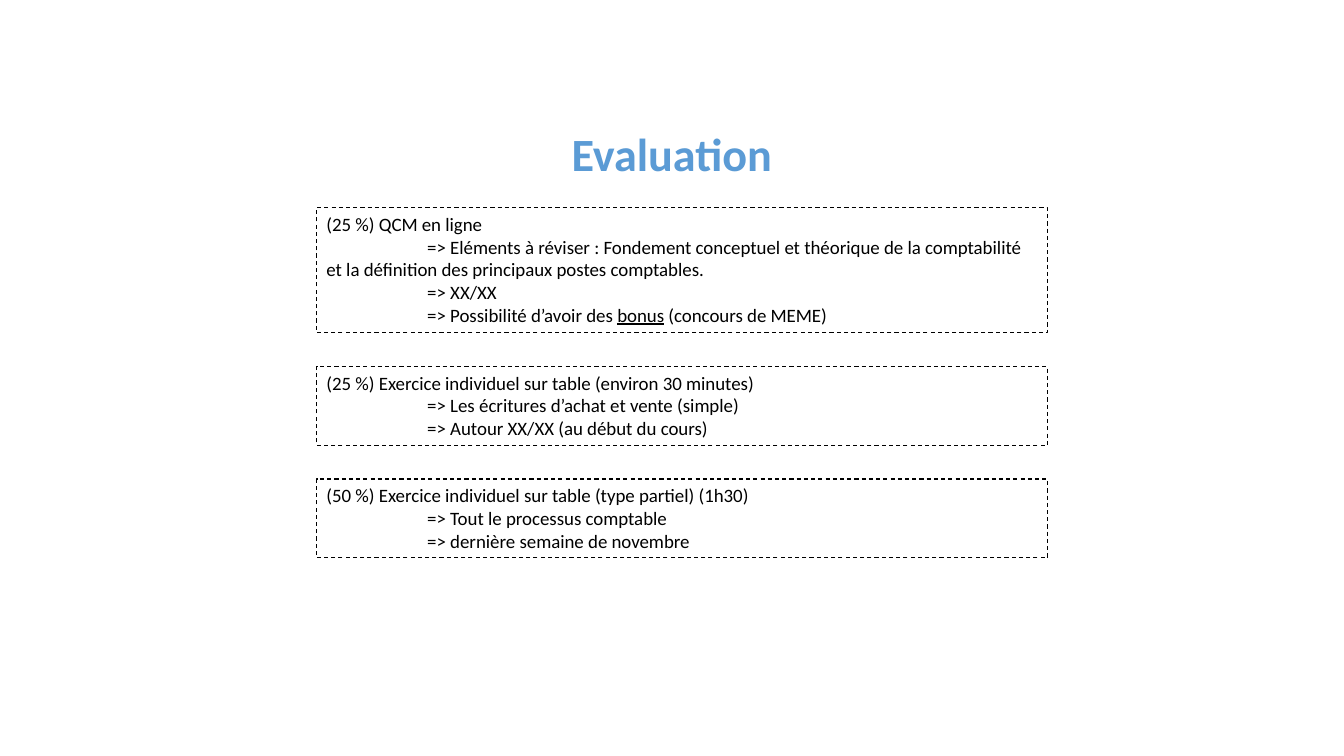
from pptx import Presentation
from pptx import util as u
from pptx.dml.color import RGBColor
from pptx.enum import dml, shapes, text

TITLE = "Evaluation"
ASSESSMENTS = [
    {"lines": 5, "heading": "(25 %) QCM en ligne", "details": [
        ["=> Eléments à réviser : Fondement conceptuel et théorique de la comptabilité "
         "et la définition des principaux postes comptables."],
        ["=> XX/XX"],
        ["=> Possibilité d’avoir des ", "bonus", " (concours de MEME)"],
    ]},
    {"lines": 3, "heading": "(25 %) Exercice individuel sur table (environ 30 minutes)", "details": [
        ["=> Les écritures d’achat et vente (simple)"],
        ["=> Autour XX/XX (au début du cours)"],
    ]},
    {"lines": 3, "heading": "(50 %) Exercice individuel sur table (type partiel) (1h30)", "details": [
        ["=> Tout le processus comptable"],
        ["=> dernière semaine de novembre"],
    ]},
]
UNDERLINED = {"bonus"}

THEME = {
    "font": "Calibri",
    "title_size": 33,
    "body_size": 13.5,
    "title": RGBColor(0x5B, 0x9B, 0xD5),
    "ink": RGBColor(0, 0, 0),
}
LEFT, TOP, WIDTH, GAP = 226.1, 148.3, 522, 24
LINE_HEIGHT, PADDING, DETAIL_INDENT = 16.48, 7, 72


def add_span(para, words, size, color, bold=False):
    span = para.add_run()
    span.text = words
    span.font.name = THEME["font"]
    span.font.size = u.Pt(size)
    span.font.color.rgb = color
    span.font.bold = bold
    if words in UNDERLINED:
        span.font.underline = True


def add_title(page):
    frame = page.shapes.add_textbox(u.Pt(236.9), u.Pt(75.6), u.Pt(486), u.Pt(67.7)).text_frame
    frame.word_wrap = True
    frame.vertical_anchor = text.MSO_ANCHOR.MIDDLE
    frame.margin_left = frame.margin_right = u.Pt(5.4)
    frame.margin_top = frame.margin_bottom = u.Pt(2.7)
    para = frame.paragraphs[0]
    para.alignment = text.PP_ALIGN.CENTER
    add_span(para, TITLE, THEME["title_size"], THEME["title"], bold=True)


def add_assessment(page, assessment, top, height):
    box = page.shapes.add_shape(shapes.MSO_SHAPE.RECTANGLE,
                                u.Pt(LEFT), u.Pt(top), u.Pt(WIDTH), u.Pt(height))
    box.shadow.inherit = False
    box.fill.background()
    box.line.color.rgb = THEME["ink"]
    box.line.width = u.Pt(0.75)
    box.line.dash_style = dml.MSO_LINE.DASH
    frame = box.text_frame
    frame.word_wrap = True
    frame.auto_size = text.MSO_AUTO_SIZE.SHAPE_TO_FIT_TEXT
    frame.vertical_anchor = text.MSO_ANCHOR.TOP
    for index, parts in enumerate([[assessment["heading"]], *assessment["details"]]):
        para = frame.add_paragraph() if index else frame.paragraphs[0]
        para.alignment = text.PP_ALIGN.LEFT
        if index:
            settings = para._p.get_or_add_pPr()
            settings.set("marL", "0")
            settings.set("indent", str(u.Pt(DETAIL_INDENT)))
        for words in parts:
            add_span(para, words, THEME["body_size"], THEME["ink"])


def main():
    deck = Presentation()
    deck.slide_width, deck.slide_height = u.Pt(960), u.Pt(540)
    page = deck.slides.add_slide(deck.slide_layouts[6])
    add_title(page)
    top = TOP
    for assessment in ASSESSMENTS:
        height = assessment["lines"] * LINE_HEIGHT + PADDING
        add_assessment(page, assessment, top, height)
        top += height + GAP
    deck.save("out.pptx")


if __name__ == "__main__":
    main()
